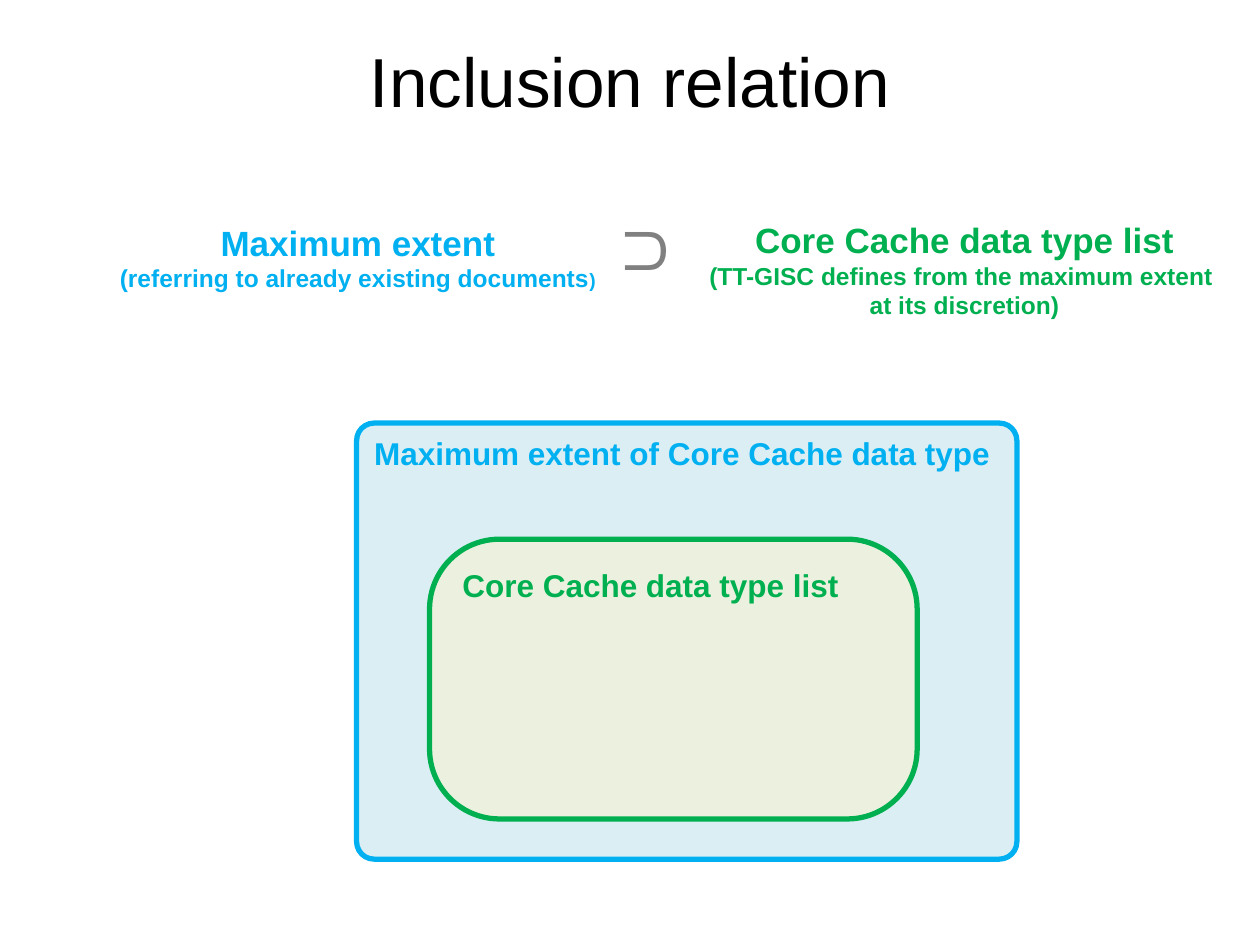
from pptx import Presentation
from pptx.dml.color import RGBColor
from pptx.enum import shapes, text
from pptx.util import Cm, Pt

BLACK = RGBColor(0x00, 0x00, 0x00)
GREY = RGBColor(0x80, 0x80, 0x80)
BLUE = RGBColor(0x00, 0xB0, 0xF0)
GREEN = RGBColor(0x00, 0xB0, 0x50)
PALE_BLUE = RGBColor(0xDB, 0xEE, 0xF4)
PALE_GREEN = RGBColor(0xEB, 0xF1, 0xDE)
LEFT, CENTER = text.PP_ALIGN.LEFT, text.PP_ALIGN.CENTER

# Content: boxes in cm (left, top, width, height); paragraphs are lists of (words, size)
TITLE = "Inclusion relation"
TITLE_BOX = (1.27, 0.76, 22.86, 3.18)

SETS = [
    ("Maximum extent of Core Cache data type",
     (7.19, 8.53, 13.31, 8.79), 0.04, PALE_BLUE, BLUE),
    ("Core Cache data type list",
     (8.66, 10.87, 9.83, 5.64), 0.25, PALE_GREEN, GREEN),
]

FORMULA = [
    ((2.11, 4.34, 10.21, 2.49), BLUE, True, CENTER,
     [[("Maximum extent", 20)],
      [("(referring to already existing documents", 14), (")", 11)]]),
    ((13.49, 4.29, 11.91, 2.31), GREEN, True, CENTER,
     [[("Core Cache data type list", 20)],
      [("(TT-GISC defines from the maximum extent \vat its discretion)", 14)]]),
    ((11.99, 3.78, 2.11, 2.13), GREY, False, LEFT, [[("⊃", 44)]]),
]


def lengths(box):
    return [Cm(value) for value in box]


def style(para, size, color, bold=False, align=LEFT):
    para.alignment = align
    for span in para.runs:
        span.font.name = "Arial"
        span.font.size = Pt(size)
        span.font.bold = bold
        span.font.color.rgb = color


deck = Presentation()
deck.slide_width, deck.slide_height = Cm(25.4), Cm(19.05)
page = deck.slides.add_slide(deck.slide_layouts[5])

# Title
title = page.shapes.title
title.left, title.top, title.width, title.height = lengths(TITLE_BOX)
title.text_frame.text = TITLE
title.text_frame.vertical_anchor = text.MSO_ANCHOR.TOP
title.text_frame.margin_top = 0
style(title.text_frame.paragraphs[0], 39.6, BLACK, align=CENTER)

# Nested sets, outer first
for label, box, rounding, fill, color in SETS:
    region = page.shapes.add_shape(
        shapes.MSO_SHAPE.ROUNDED_RECTANGLE, *lengths(box))
    region.adjustments[0] = rounding
    region.shadow.inherit = False
    region.fill.solid()
    region.fill.fore_color.rgb = fill
    region.line.color.rgb = color
    region.line.width = Pt(3)
    region.text_frame.text = label
    region.text_frame.word_wrap = True
    region.text_frame.vertical_anchor = text.MSO_ANCHOR.TOP
    style(region.text_frame.paragraphs[0], 18, color, bold=True)

# Formula: one set includes the other
for box, color, bold, align, paragraphs in FORMULA:
    frame = page.shapes.add_textbox(*lengths(box)).text_frame
    frame.word_wrap = True
    for index, parts in enumerate(paragraphs):
        para = frame.add_paragraph() if index else frame.paragraphs[0]
        (words, size), *extras = parts
        para.text = words
        style(para, size, color, bold, align)
        for words, size in extras:
            span = para.add_run()
            span.text = words
            span.font.name = "Arial"
            span.font.size = Pt(size)
            span.font.bold = bold
            span.font.color.rgb = color

deck.save("out.pptx")
